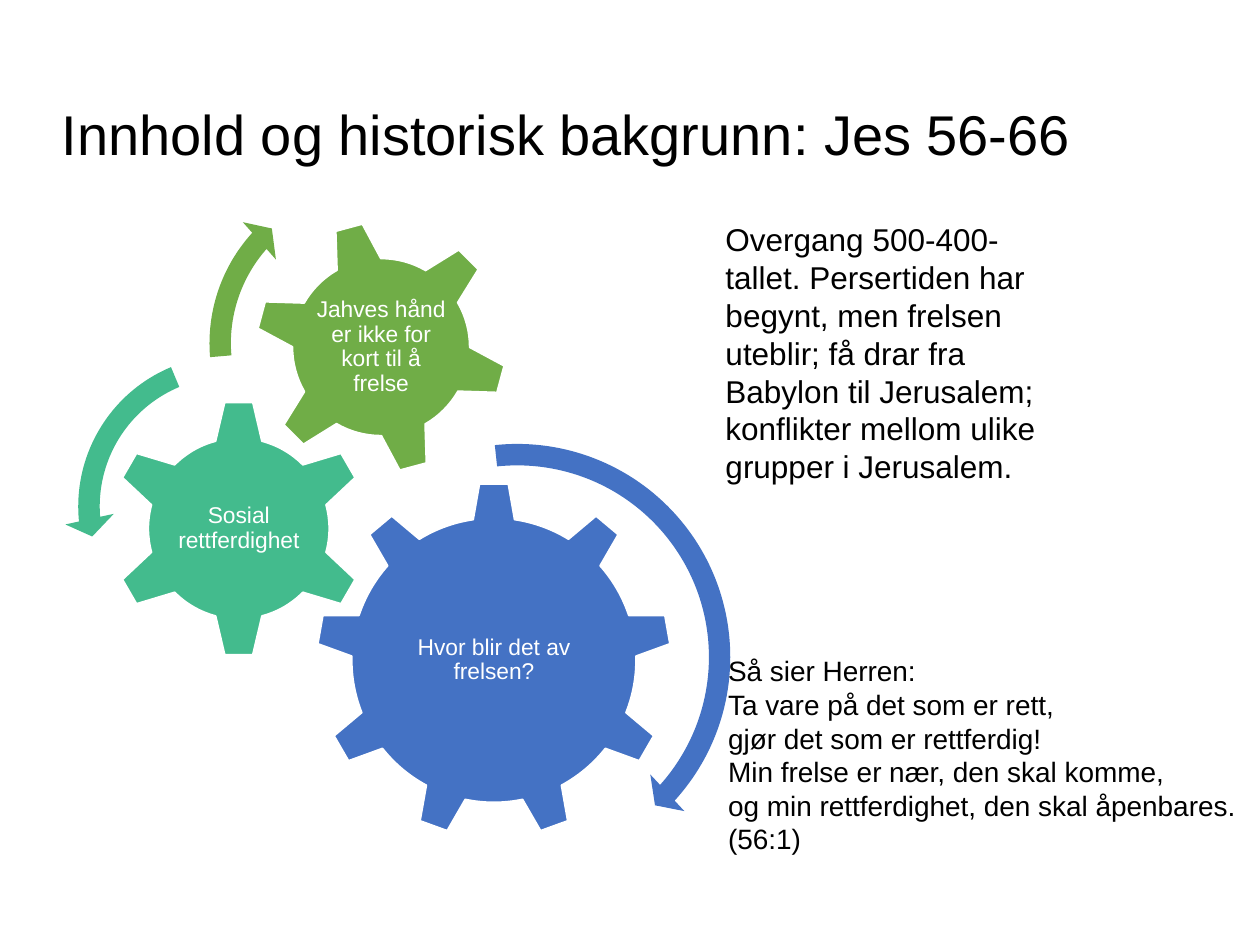
from pptx import Presentation
from pptx.dml.color import RGBColor
from pptx.enum.shapes import MSO_SHAPE as SHAPE
from pptx.enum.text import MSO_ANCHOR as ANCHOR, MSO_AUTO_SIZE as FIT, PP_ALIGN as ALIGN
from pptx.util import Inches, Pt

FONT = "Arial"
COLORS = {"text": "000000", "white": "FFFFFF", "blue": "4472C4",
          "teal": "43BB8D", "green": "70AD47"}
COLS, ROWS = 100, 75  # square grid cells over the slide
CELL = Inches(0.1)

# gear shape, colour, (col, row, size), rotation, label, label size
GEARS = [
    (SHAPE.GEAR_9, "blue", (20.1, 25.3, 28.2), 0,
     "Hvor blir det av frelsen?", (16.9, 14.5)),
    (SHAPE.GEAR_6, "teal", (3.7, 18.7, 20.5), 0,
     "Sosial rettferdighet", (10.2, 10.1)),
    (SHAPE.GEAR_6, "green", (15.2, 4.5, 20.1), 345,
     "Jahves hånd er ikke for kort til å frelse", (11.3, 11.3)),
]
# arrow shape, colour, (col, row, size), adjustments
ARROWS = [
    (SHAPE.CIRCULAR_ARROW, "blue", (18, 21.1, 36.1),
     (0.047, 2.99, 25.268, 158.386, 0.055)),
    (SHAPE.LEFT_CIRCULAR_ARROW, "teal", (0.1, 14.1, 26.2),
     (0.065, 4.3, 104.891, 148.378, 0.075)),
    (SHAPE.CIRCULAR_ARROW, "green", (10.5, 0.1, 28.3),
     (0.06, 3.941, 133.138, 105.082, 0.07)),
]
VERSE = [
    "Så sier Herren:",
    "Ta vare på det som er rett,",
    "gjør det som er rettferdig!",
    "Min frelse er nær, den skal komme,",
    "og min rettferdighet, den skal åpenbares.",
    "(56:1)",
]
BACKGROUND = ("Overgang 500-400-tallet. Persertiden har begynt, men frelsen "
              "uteblir; få drar fra Babylon til Jerusalem; konflikter mellom "
              "ulike grupper i Jerusalem.")


def color(name):
    return RGBColor.from_string(COLORS[name])


def grid(*cells):
    """Turn grid cells into slide lengths."""
    return [round(c * CELL) for c in cells]


def write(tf, lines, size, name="text", align=ALIGN.LEFT, spacing=None, inset=None):
    tf.word_wrap = True
    if inset is not None:
        tf.margin_left = tf.margin_right = tf.margin_top = tf.margin_bottom = inset
    tf.text = "\n".join(lines)
    for p in tf.paragraphs:
        p.alignment = align
        p.line_spacing = spacing
        for r in p.runs:
            r.font.name, r.font.size = FONT, Pt(size)
            r.font.color.rgb = color(name)


def add_solid(shapes, kind, fill, col, row, size):
    sp = shapes.add_shape(kind, *grid(col, row, size, size))
    sp.shadow.inherit = False
    sp.fill.solid()
    sp.fill.fore_color.rgb = color(fill)
    return sp


def add_gears(s, left, top):
    shapes = s.shapes.add_group_shape().shapes
    for kind, fill, (col, row, size), rotation, label, (w, h) in GEARS:
        gear = add_solid(shapes, kind, fill, left + col, top + row, size)
        gear.rotation = rotation
        gear.line.color.rgb = color("white")
        gear.line.width = Pt(1)
        tb = shapes.add_textbox(*grid(left + col + (size - w) / 2,
                                      top + row + (size - h) / 2, w, h))
        write(tb.text_frame, [label], 13, "white", ALIGN.CENTER, 0.9, Inches(0.02))
        tb.text_frame.vertical_anchor = ANCHOR.MIDDLE
    for kind, fill, (col, row, size), adjustments in ARROWS:
        arrow = add_solid(shapes, kind, fill, left + col, top + row, size)
        arrow.line.fill.background()
        for i, value in enumerate(adjustments):
            arrow.adjustments[i] = value


def add_title(s, *box):
    title = s.shapes.title
    title.left, title.top, title.width, title.height = grid(*box)
    write(title.text_frame, ["Innhold og historisk bakgrunn: Jes 56-66"], 32,
          spacing=0.9, inset=0)
    title.text_frame.vertical_anchor = ANCHOR.TOP
    title.text_frame.auto_size = FIT.NONE


def add_note(s, lines, size, *box):
    tf = s.shapes.add_textbox(*grid(*box)).text_frame
    write(tf, lines, size)
    tf.auto_size = FIT.SHAPE_TO_FIT_TEXT


def main():
    prs = Presentation()
    prs.slide_width, prs.slide_height = grid(COLS, ROWS)
    s = prs.slides.add_slide(prs.slide_layouts[5])
    add_title(s, 4.9, 8.5, 84.4, 10.5)
    add_gears(s, 5, 13)
    add_note(s, VERSE, 16, 56.8, 51.4, 43.2, 17.2)
    add_note(s, [BACKGROUND], 18, 56.6, 17, 26.7, 22.2)
    prs.save("out.pptx")


if __name__ == "__main__":
    main()
